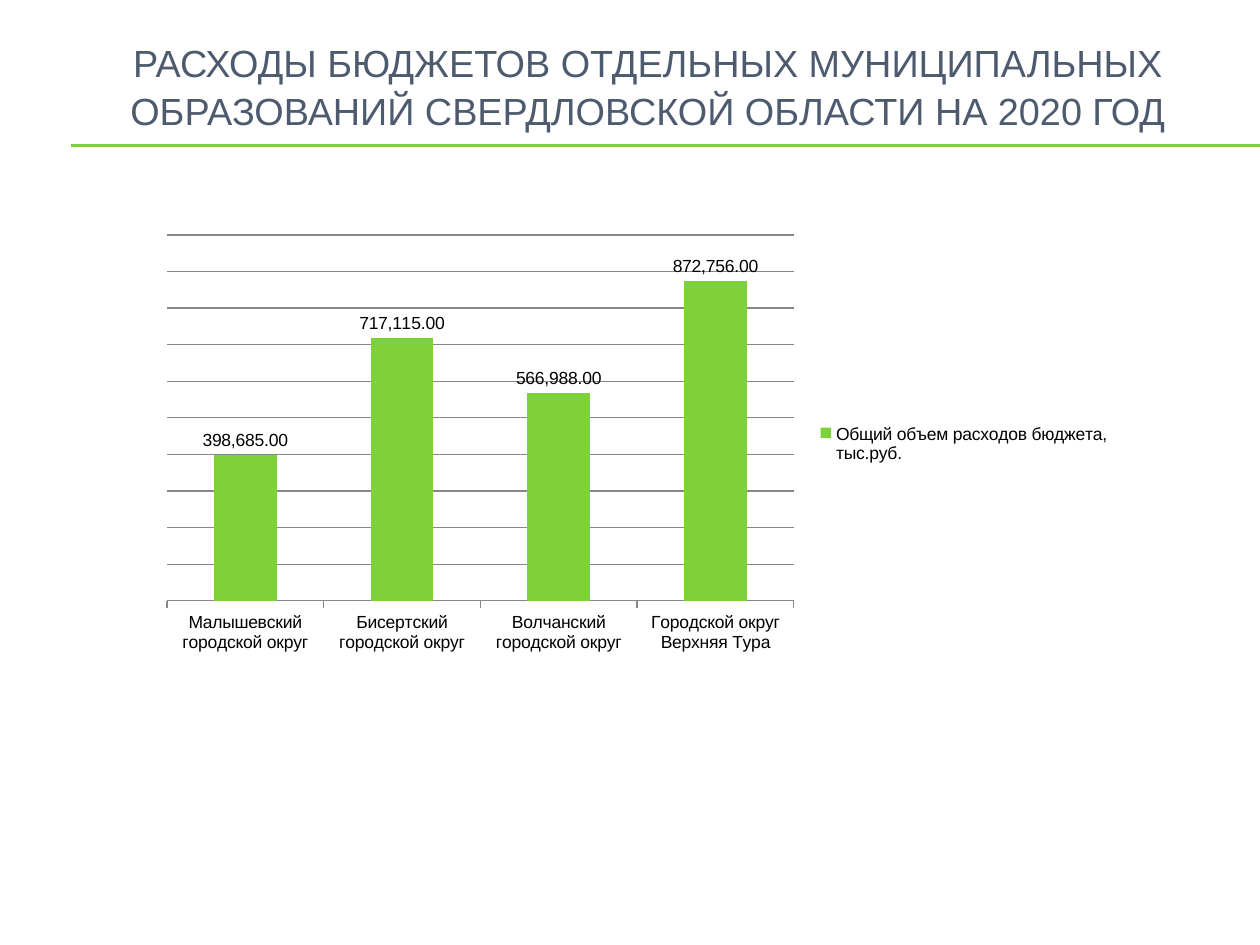
from dataclasses import dataclass

from lxml.etree import SubElement
from pptx import Presentation
from pptx.chart.data import CategoryChartData
from pptx.dml.color import RGBColor
from pptx.enum.chart import XL_CHART_TYPE as ChartType
from pptx.enum.chart import XL_LABEL_POSITION as LabelPosition
from pptx.enum.chart import XL_LEGEND_POSITION as LegendPosition
from pptx.enum.chart import XL_TICK_MARK as TickMark
from pptx.enum.shapes import MSO_CONNECTOR as Connector
from pptx.enum.text import MSO_ANCHOR as Anchor
from pptx.enum.text import MSO_AUTO_SIZE as AutoSize
from pptx.enum.text import PP_ALIGN as Align
from pptx.oxml import parse_xml
from pptx.oxml.ns import nsdecls, qn
from pptx.util import Pt

EMU_PER_PX = 914400 / 126


@dataclass(frozen=True)
class Theme:
    accent: str = "7FD13B"
    title: str = "4E5B6F"
    text: str = "000000"
    grid: str = "878787"
    font: str = "Arial"
    title_size: float = 21.6
    chart_size: float = 10
    line_width: float = 0.75


THEME = Theme()

TITLE = "РАСХОДЫ БЮДЖЕТОВ ОТДЕЛЬНЫХ МУНИЦИПАЛЬНЫХ ОБРАЗОВАНИЙ СВЕРДЛОВСКОЙ ОБЛАСТИ НА 2020 ГОД"
SERIES_NAME = "Общий объем расходов бюджета, тыс.руб."
EXPENSES = {
    "Малышевский городской округ": 398685,
    "Бисертский городской округ": 717115,
    "Волчанский городской округ": 566988,
    "Городской округ Верхняя Тура": 872756,
}


def px(length):
    return round(length * EMU_PER_PX)


def format_font(font, size=THEME.chart_size, color=THEME.text):
    font.name = THEME.font
    font.size = Pt(size)
    font.color.rgb = RGBColor.from_string(color)


def write_text(text_frame, text, align=Align.LEFT, anchor=Anchor.TOP, line_spacing=1.0, **font_format):
    text_frame.word_wrap = True
    text_frame.auto_size = AutoSize.NONE
    text_frame.vertical_anchor = anchor
    paragraph = text_frame.paragraphs[0]
    paragraph.alignment = align
    paragraph.line_spacing = line_spacing
    run = paragraph.add_run()
    run.text = text
    format_font(run.font, **font_format)


def format_line(line, color):
    line.color.rgb = RGBColor.from_string(color)
    line.width = Pt(THEME.line_width)


def add_rules(slide, left, top, width):
    for offset in range(2):
        y = px(top + offset)
        rule = slide.shapes.add_connector(Connector.STRAIGHT, px(left), y, px(left + width), y)
        format_line(rule.line, THEME.accent)
        SubElement(rule._element.spPr, qn("a:effectLst"))


def add_title(slide, left, top, width, height):
    title = slide.shapes.title
    title.left, title.top, title.width, title.height = map(px, (left, top, width, height))
    write_text(title.text_frame, TITLE, align=Align.CENTER, anchor=Anchor.MIDDLE,
               line_spacing=1.06, size=THEME.title_size, color=THEME.title)


def set_layout(element, position, area, box, target=""):
    for layout in element.findall(qn("c:layout")):
        element.remove(layout)
    width, height = box
    fractions = zip("xywh", area, (width, height, width, height))
    values = "".join(f'<c:{key} val="{length / total:.4f}"/>' for key, length, total in fractions)
    element.insert(position, parse_xml(
        f'<c:layout {nsdecls("c")}><c:manualLayout>{target}'
        f'<c:xMode val="edge"/><c:yMode val="edge"/>{values}</c:manualLayout></c:layout>'))


def add_expense_chart(slide, left, top, width, height):
    data = CategoryChartData(number_format="#,##0.00")
    data.categories = list(EXPENSES)
    data.add_series(SERIES_NAME, list(EXPENSES.values()))
    chart = slide.shapes.add_chart(
        ChartType.COLUMN_CLUSTERED, *map(px, (left, top, width, height)), data).chart
    chart.has_title = False
    format_font(chart.font)

    plot = chart.plots[0]
    plot.vary_by_categories = False
    plot.gap_width = 150
    fill = plot.series[0].format.fill
    fill.solid()
    fill.fore_color.rgb = RGBColor.from_string(THEME.accent)

    plot.has_data_labels = True
    labels = plot.data_labels
    labels.show_value = True
    labels.number_format = "#,##0.00"
    labels.number_format_is_linked = False
    labels.position = LabelPosition.OUTSIDE_END
    format_font(labels.font)

    value_axis = chart.value_axis
    value_axis.visible = False
    value_axis.minimum_scale = 0
    value_axis.maximum_scale = 1000000
    value_axis.major_unit = 100000
    value_axis.has_major_gridlines = True
    format_line(value_axis.major_gridlines.format.line, THEME.grid)

    category_axis = chart.category_axis
    category_axis.major_tick_mark = TickMark.OUTSIDE
    format_line(category_axis.format.line, THEME.grid)
    format_font(category_axis.tick_labels.font)

    chart.has_legend = True
    legend = chart.legend
    legend.position = LegendPosition.RIGHT
    legend.include_in_layout = False
    format_font(legend.font)

    box = (width, height)
    set_layout(chart._chartSpace.chart.plotArea, 0, (20, 8, 627, 366), box,
               target='<c:layoutTarget val="inner"/>')
    set_layout(legend._element, 1, (667, 192, 300, 50), box)


def main():
    presentation = Presentation()
    presentation.slide_width = px(1260)
    presentation.slide_height = px(945)
    slide = presentation.slides.add_slide(presentation.slide_layouts[5])
    add_rules(slide, 71, 145, 1189)
    add_title(slide, 69, 20, 1158, 130)
    add_expense_chart(slide, 147, 227, 974, 435)
    presentation.save("out.pptx")


if __name__ == "__main__":
    main()
